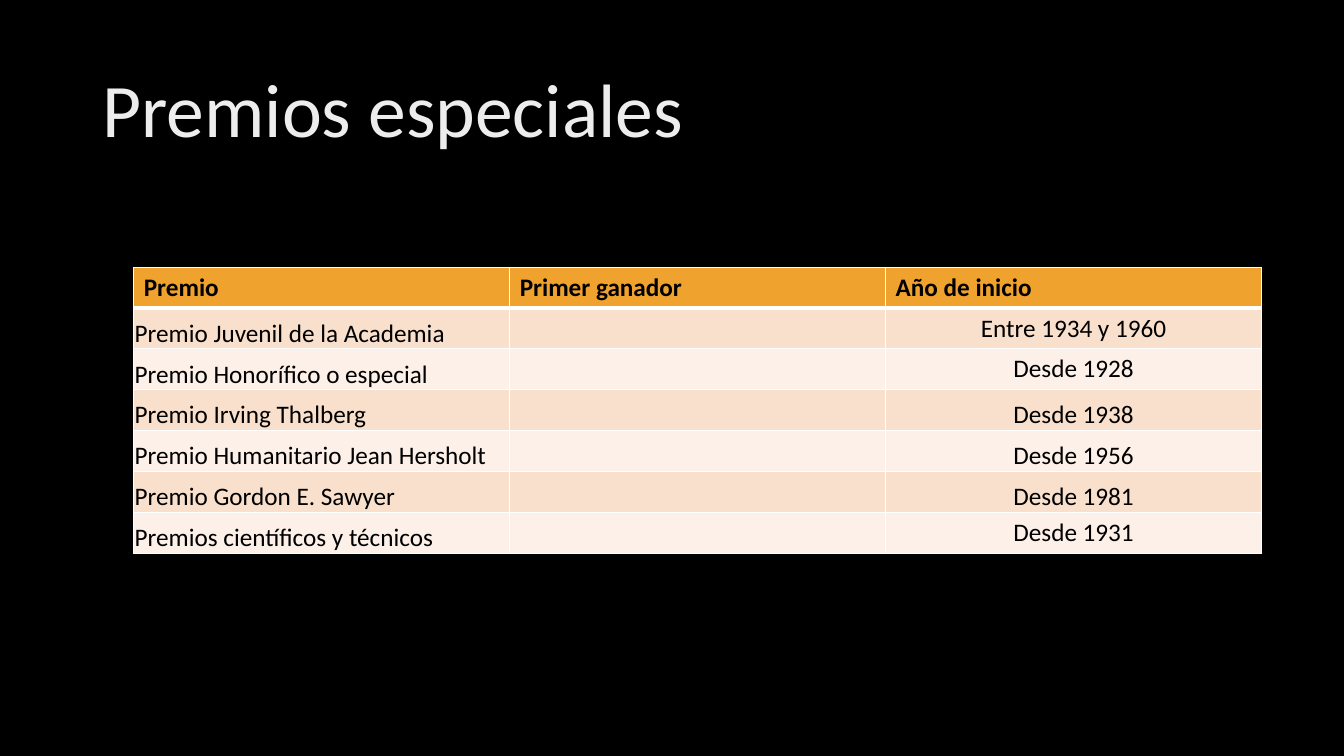
from dataclasses import dataclass

from lxml.etree import SubElement
from pptx import Presentation
from pptx.dml.color import RGBColor
from pptx.enum.text import MSO_ANCHOR, PP_ALIGN
from pptx.oxml.ns import qn
from pptx.table import Table, _Cell
from pptx.util import Pt

BLACK = RGBColor(0x00, 0x00, 0x00)
WHITE = RGBColor(0xFF, 0xFF, 0xFF)
TITLE_GREY = RGBColor(0xED, 0xED, 0xED)
HEADER_ORANGE = RGBColor(0xF0, 0xA2, 0x2E)
BANDS = (RGBColor(0xF9, 0xE0, 0xCD), RGBColor(0xFC, 0xF0, 0xE8))
FONT = "Calibri"
COLUMN_WIDTH = Pt(268.56)
ROW_HEIGHT = Pt(29.2)


@dataclass(frozen=True)
class Award:
    name: str
    start: str
    start_at_bottom: bool = False


HEADINGS = ("Premio", "Primer ganador", "Año de inicio")
AWARDS = (
    Award("Premio Juvenil de la Academia", "Entre 1934 y 1960"),
    Award("Premio Honorífico o especial", "Desde 1928"),
    Award("Premio Irving Thalberg", "Desde 1938", True),
    Award("Premio Humanitario Jean Hersholt", "Desde 1956", True),
    Award("Premio Gordon E. Sawyer", "Desde 1981", True),
    Award("Premios científicos y técnicos", "Desde 1931"),
)


def add_borders(cell: _Cell, top: float, bottom: float) -> None:
    properties = cell._tc.get_or_add_tcPr()
    widths = {"a:lnL": 1, "a:lnR": 1, "a:lnT": top, "a:lnB": bottom}
    for position, (tag, width) in enumerate(widths.items()):
        border = SubElement(properties, qn(tag), w=str(Pt(width)))
        fill = SubElement(border, qn("a:solidFill"))
        SubElement(fill, qn("a:srgbClr"), val=str(WHITE))
        properties.insert(position, border)


def fill_cell(cell: _Cell, text: str, color: RGBColor, bold: bool = False,
              centred: bool = False, at_bottom: bool = False) -> None:
    cell.fill.solid()
    cell.fill.fore_color.rgb = color
    if at_bottom:
        cell.vertical_anchor = MSO_ANCHOR.BOTTOM
        cell.margin_left = cell.margin_top = cell.margin_right = Pt(0.75)
        cell.margin_bottom = Pt(0)
    paragraph = cell.text_frame.paragraphs[0]
    if centred:
        paragraph.alignment = PP_ALIGN.CENTER
    if text:
        paragraph.text = text
    for run in paragraph.runs:
        run.font.name = FONT
        run.font.size = Pt(18)
        run.font.bold = bold
        run.font.color.rgb = BLACK


def fill_table(table: Table) -> None:
    for column in table.columns:
        column.width = COLUMN_WIDTH
    for row in table.rows:
        row.height = ROW_HEIGHT
    for index, heading in enumerate(HEADINGS):
        header = table.cell(0, index)
        fill_cell(header, heading, HEADER_ORANGE, bold=True)
        add_borders(header, 1, 3)
    for index, award in enumerate(AWARDS):
        band = BANDS[index % 2]
        name, winner, start = table.rows[index + 1].cells
        fill_cell(name, award.name, band, at_bottom=True)
        fill_cell(winner, "", band)
        fill_cell(start, award.start, band, centred=True,
                  at_bottom=award.start_at_bottom)
        for cell in (name, winner, start):
            add_borders(cell, 3 if index == 0 else 1, 1)


def main() -> None:
    presentation = Presentation()
    presentation.slide_width = Pt(960)
    presentation.slide_height = Pt(540)
    slide = presentation.slides.add_slide(presentation.slide_layouts[5])
    slide.background.fill.solid()
    slide.background.fill.fore_color.rgb = BLACK

    title = slide.shapes.title
    title.left, title.top = Pt(66), Pt(28.75)
    title.width, title.height = Pt(828), Pt(104.4)
    title.text_frame.text = "Premios especiales"
    title.text_frame.vertical_anchor = MSO_ANCHOR.MIDDLE
    heading = title.text_frame.paragraphs[0]
    heading.alignment = PP_ALIGN.LEFT
    heading.line_spacing = 0.9
    font = heading.runs[0].font
    font.name = FONT
    font.size = Pt(54)
    font.color.rgb = TITLE_GREY

    rows, columns = len(AWARDS) + 1, len(HEADINGS)
    awards = slide.shapes.add_table(
        rows, columns, Pt(95.5), Pt(190.8),
        COLUMN_WIDTH * columns, ROW_HEIGHT * rows)
    fill_table(awards.table)
    presentation.save("out.pptx")


if __name__ == "__main__":
    main()
